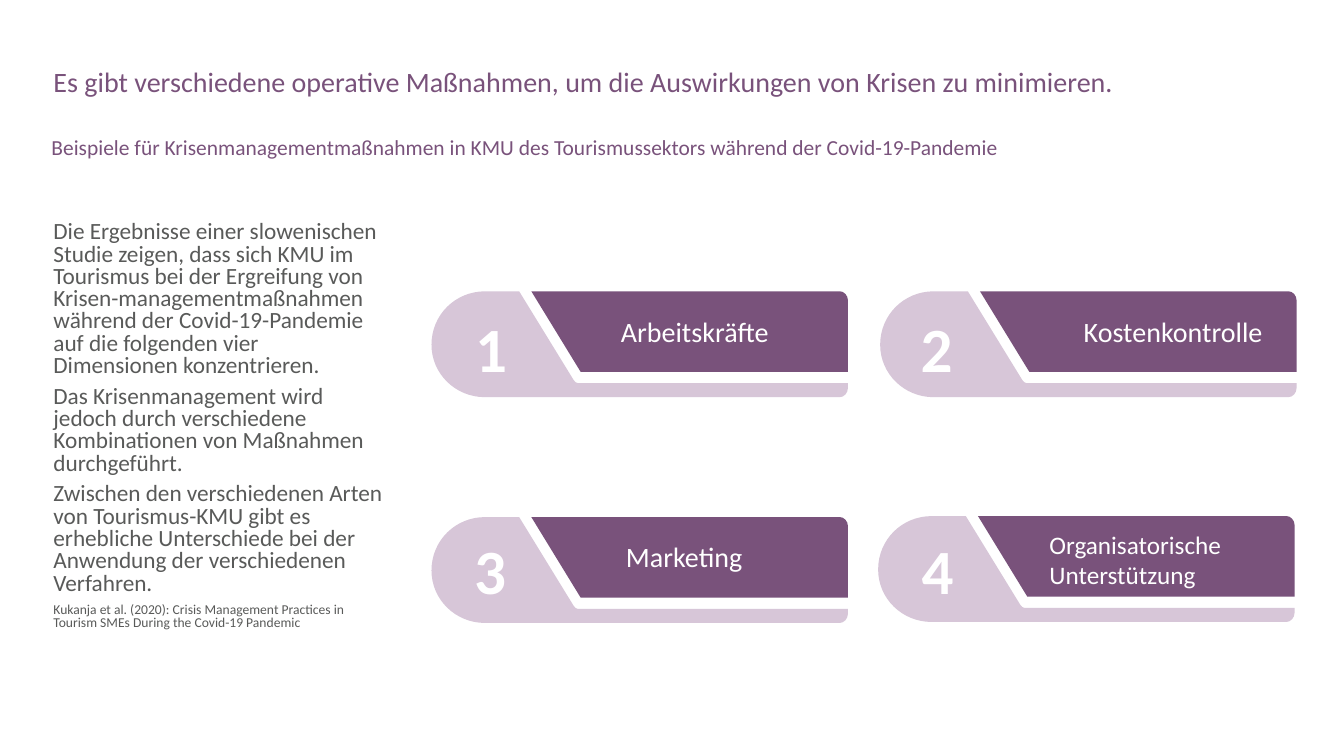
"""Build the slide on operative crisis measures in tourism SMEs."""

from dataclasses import dataclass
from typing import Any

from lxml.etree import SubElement
from pptx import Presentation
from pptx.dml.color import RGBColor
from pptx.enum.text import MSO_ANCHOR as Anchor, MSO_AUTO_SIZE as AutoSize, PP_ALIGN as Align
from pptx.oxml.ns import qn
from pptx.util import Inches, Pt

Point = tuple[float, float]
Frame = tuple[float, float, float, float]
Outline = list[tuple[Point, ...]]

COLOURS = {"plum": "79527B", "lilac": "D7C6D8", "grey": "595A59", "white": "FFFFFF"}


@dataclass(frozen=True)
class Line:
    """One paragraph with its look."""

    text: str
    size: float
    colour: str
    bold: bool = False
    align: Any = Align.LEFT
    spacing: float = 1.0
    before: float = 0


@dataclass(frozen=True)
class Card:
    """One numbered measure with the places of its parts."""

    number: int
    label: str
    corner: Point
    number_at: Point
    label_at: Point
    label_size: int = 20


CARDS = [
    Card(1, "Arbeitskräfte", (4.28, 2.89), (4.61, 3.02), (6.06, 3.07)),
    Card(2, "Kostenkontrolle", (8.73, 2.89), (9.03, 3.02), (10.65, 3.07)),
    Card(3, "Marketing", (4.28, 5.13), (4.6, 5.22), (6.11, 5.3)),
    Card(4, "Organisatorische Unterstützung", (8.71, 5.12), (9.04, 5.22), (10.31, 5.2), 18),
]

BAND: Outline = [
    ((1.45, 0.91),),
    ((1.44, 0.91), (1.42, 0.9), (1.41, 0.88)),
    ((0.87, 0),),
    ((0.53, 0),),
    ((0.24, 0), (0, 0.23), (0, 0.53)),
    ((0, 0.82), (0.24, 1.05), (0.53, 1.05)),
    ((4.05, 1.05),),
    ((4.09, 1.05), (4.13, 1.01), (4.13, 0.96)),
    ((4.13, 0.91),),
]
PANEL: Outline = [
    ((1.48, 0.8),),
    ((4.13, 0.8),),
    ((4.13, 0.09),),
    ((4.13, 0.04), (4.09, 0), (4.05, 0)),
    ((0.99, 0),),
]

FINDINGS = [
    "Die Ergebnisse einer slowenischen Studie zeigen, dass sich KMU im Tourismus bei der "
    "Ergreifung von Krisen-managementmaßnahmen während der Covid-19-Pandemie auf die "
    "folgenden vier Dimensionen konzentrieren.",
    "Das Krisenmanagement wird jedoch durch verschiedene Kombinationen von Maßnahmen "
    "durchgeführt.",
    "Zwischen den verschiedenen Arten von Tourismus-KMU gibt es erhebliche Unterschiede "
    "bei der Anwendung der verschiedenen Verfahren.",
]
CITATION = "Kukanja et al. (2020): Crisis Management Practices in Tourism SMEs During the Covid-19 Pandemic"
HEADLINE = "Es gibt verschiedene operative Maßnahmen, um die Auswirkungen von Krisen zu minimieren."
SUBTITLE = "Beispiele für Krisenmanagementmaßnahmen in KMU des Tourismussektors während der Covid-19-Pandemie"


def apply(target: Any, values: dict[str, Any]) -> None:
    """Set every named attribute on the target."""
    for name, value in values.items():
        setattr(target, name, value)


def fill_text(box: Any, lines: list[Line], anchor: Any = Anchor.TOP) -> None:
    """Write formatted paragraphs into a box."""
    frame = box.text_frame
    apply(frame, {"word_wrap": True, "auto_size": AutoSize.NONE, "vertical_anchor": anchor})
    for index, line in enumerate(lines):
        para = frame.add_paragraph() if index else frame.paragraphs[0]
        apply(para, {
            "alignment": line.align,
            "line_spacing": line.spacing,
            "space_before": Pt(line.before),
        })
        span = para.add_run()
        span.text = line.text
        apply(span.font, {"name": "Calibri", "size": Pt(line.size), "bold": line.bold})
        span.font.color.rgb = RGBColor.from_string(COLOURS[line.colour])


def place(box: Any, area: Frame) -> None:
    """Move and size a box, in inches."""
    apply(box, dict(zip(("left", "top", "width", "height"), map(Inches, area))))


def bend(shape: Any, outline: Outline) -> None:
    """Turn each run of three control points into one cubic curve."""
    track = next(shape.element.iter(qn("a:path")))
    sides = iter(track.findall(qn("a:lnTo")))
    for step in outline[1:]:
        first, *others = [next(sides) for _ in step]
        if others:
            arc = SubElement(track, qn("a:cubicBezTo"))
            first.addprevious(arc)
            for side in (first, *others):
                arc.append(side[0])
                track.remove(side)


def draw_outline(page: Any, outline: Outline, corner: Point, colour: str) -> None:
    """Draw a filled outline from a corner point."""
    left, top = corner
    points = [(Inches(left + x), Inches(top + y)) for step in outline for x, y in step]
    builder = page.shapes.build_freeform(*points[0])
    builder.add_line_segments(points[1:], close=False)
    builder.add_line_segments([], close=True)
    shape = builder.convert_to_shape()
    bend(shape, outline)
    shape.shadow.inherit = False
    shape.fill.solid()
    shape.fill.fore_color.rgb = RGBColor.from_string(COLOURS[colour])
    shape.line.fill.background()


def add_text(page: Any, area: Frame, line: Line) -> None:
    """Add a text box with one paragraph."""
    fill_text(page.shapes.add_textbox(*map(Inches, area)), [line])


def draw_card(page: Any, card: Card) -> None:
    """Draw the band, panel, number and label of a card."""
    draw_outline(page, BAND, card.corner, "lilac")
    draw_outline(page, PANEL, card.corner, "plum")
    add_text(page, (*card.number_at, 0.52, 0.86),
             Line(str(card.number), 45, "white", bold=True, align=Align.CENTER))
    add_text(page, (*card.label_at, 2.69, 0.44), Line(card.label, card.label_size, "white"))


def main() -> None:
    """Build and save the deck."""
    deck = Presentation()
    apply(deck, {"slide_width": Inches(13.33), "slide_height": Inches(7.5)})
    page = deck.slides.add_slide(deck.slide_layouts.get_by_name("Comparison"))
    holders = {holder.placeholder_format.idx: holder for holder in page.placeholders}

    findings = [
        Line(text, 16.6, "grey", spacing=0.8, before=6 if index else 0)
        for index, text in enumerate(FINDINGS)
    ]
    findings.append(Line(CITATION, 9.7, "grey", spacing=0.8, before=6))
    place(holders[1], (0.43, 1.79, 3.49, 4.87))
    fill_text(holders[1], findings, Anchor.MIDDLE)
    place(holders[0], (0.43, 0.63, 12.54, 0.64))
    fill_text(holders[0], [Line(HEADLINE, 20, "plum", spacing=0.9)])
    place(holders[3], (0.41, 1.35, 12.56, 0.28))
    fill_text(holders[3], [Line(SUBTITLE, 15.3, "plum", spacing=0.7)])
    for index in (2, 4):
        element = holders[index].element
        element.getparent().remove(element)

    for card in CARDS:
        draw_card(page, card)
    deck.save("out.pptx")


if __name__ == "__main__":
    main()
